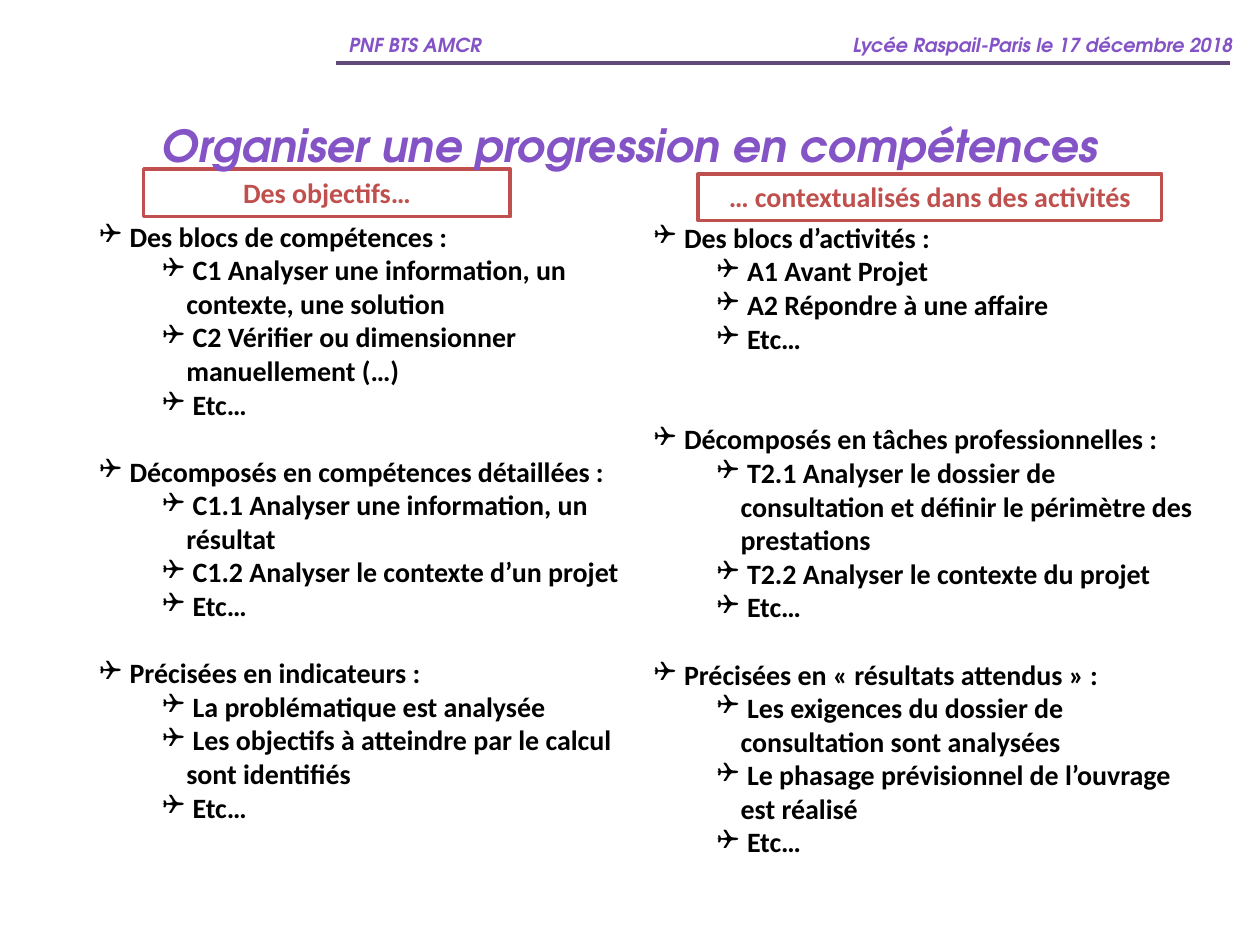
import lxml.etree
import pptx
import pptx.dml.color
import pptx.enum.shapes
import pptx.enum.text
import pptx.oxml.ns
import pptx.util

Inches = pptx.util.Inches
Pt = pptx.util.Pt
RGBColor = pptx.dml.color.RGBColor
Anchor = pptx.enum.text.MSO_ANCHOR
Align = pptx.enum.text.PP_ALIGN
qn = pptx.oxml.ns.qn

PURPLE = RGBColor(0x84, 0x53, 0xC6)
DARK_PURPLE = RGBColor(0x60, 0x4A, 0x7B)
RED = RGBColor(0xC0, 0x50, 0x4D)
BLACK = RGBColor(0, 0, 0)
WHITE = RGBColor(0xFF, 0xFF, 0xFF)
TITLE_FONT = "TeX Gyre Adventor"
BODY_FONT = "Calibri"
LINE_HEIGHT = 19.2

COLUMNS = [
    ("Des objectifs…", (1.14, 1.34, 2.91, 0.38), (0.69, 1.69, 4.49, 5.35), [
        (0, "Des blocs de compétences :", [
            "C1 Analyser une information, un contexte, une solution",
            "C2 Vérifier ou dimensionner manuellement (…)",
            "Etc…"]),
        (1, "Décomposés en compétences détaillées :", [
            "C1.1 Analyser une information, un résultat",
            "C1.2 Analyser le contexte d’un projet",
            "Etc…"]),
        (1, "Précisées en indicateurs :", [
            "La problématique est analysée",
            "Les objectifs à atteindre par le calcul sont identifiés",
            "Etc…"]),
    ]),
    ("… contextualisés dans des activités", (5.54, 1.38, 3.68, 0.37), (5.09, 1.7, 4.49, 5.62), [
        (0, "Des blocs d’activités :", [
            "A1 Avant Projet",
            "A2 Répondre à une affaire",
            "Etc…"]),
        (2, "Décomposés en tâches professionnelles :", [
            "T2.1 Analyser le dossier de consultation et définir le périmètre des prestations",
            "T2.2 Analyser le contexte du projet",
            "Etc…"]),
        (1, "Précisées en « résultats attendus » :", [
            "Les exigences du dossier de consultation sont analysées",
            "Le phasage prévisionnel de l’ouvrage est réalisé",
            "Etc…"]),
    ]),
]


def set_font(paragraph, name, size, color, italic=False):
    font = paragraph.font
    font.name = name
    font.size = Pt(size)
    font.bold = True
    font.italic = italic
    font.color.rgb = color


def set_bullet(paragraph, level):
    paragraph.level = level
    properties = paragraph._p.get_or_add_pPr()
    properties.set("marL", str(Inches(0.19 + 0.5 * level)))
    properties.set("indent", str(-Inches(0.19)))
    lxml.etree.SubElement(properties, qn("a:buFont"), typeface="Wingdings")
    lxml.etree.SubElement(properties, qn("a:buChar"), char="❑")


presentation = pptx.Presentation()
presentation.slide_width = Inches(10)
presentation.slide_height = Inches(7.5)
slide = presentation.slides.add_slide(presentation.slide_layouts[6])
shapes = slide.shapes

header = shapes.add_textbox(Inches(2.67), Inches(0.21), Inches(7.33), Inches(0.29))
header.text_frame.word_wrap = True
header.text_frame.vertical_anchor = Anchor.MIDDLE
paragraph = header.text_frame.paragraphs[0]
paragraph.text = "PNF BTS AMCR\tLycée Raspail-Paris le 17 décembre 2018"
tabs = lxml.etree.SubElement(paragraph._p.get_or_add_pPr(), qn("a:tabLst"))
lxml.etree.SubElement(tabs, qn("a:tab"), pos=str(Inches(4)), algn="l")
set_font(paragraph, TITLE_FONT, 11, PURPLE, italic=True)

header_rule = shapes.add_connector(
    pptx.enum.shapes.MSO_CONNECTOR.STRAIGHT,
    Inches(2.67), Inches(0.5), Inches(9.76), Inches(0.5))
header_rule.line.color.rgb = DARK_PURPLE
header_rule.line.width = Pt(2)
lxml.etree.SubElement(header_rule._element.spPr, qn("a:effectLst"))

for heading, heading_box, list_box, blocks in COLUMNS:
    label = shapes.add_shape(
        pptx.enum.shapes.MSO_SHAPE.RECTANGLE, *map(Inches, heading_box))
    label.shadow.inherit = False
    label.fill.solid()
    label.fill.fore_color.rgb = WHITE
    label.line.color.rgb = RED
    label.line.width = Pt(2)
    label.text_frame.word_wrap = True
    label.text_frame.vertical_anchor = Anchor.TOP
    paragraph = label.text_frame.paragraphs[0]
    paragraph.text = heading
    paragraph.alignment = Align.CENTER
    set_font(paragraph, BODY_FONT, 16, RED)

    frame = shapes.add_textbox(*map(Inches, list_box)).text_frame
    frame.word_wrap = True
    for gap_lines, block_title, items in blocks:
        for index, text in enumerate([block_title] + items):
            first = index == 0
            paragraph = frame.add_paragraph() if frame.text else frame.paragraphs[0]
            paragraph.text = " " + text
            if first and gap_lines:
                paragraph.space_before = Pt(gap_lines * LINE_HEIGHT)
            set_bullet(paragraph, 0 if first else 1)
            set_font(paragraph, BODY_FONT, 16, BLACK)

title = shapes.add_textbox(Inches(0.5), Inches(0.92), Inches(9), Inches(0.83))
title.text_frame.word_wrap = True
title.text_frame.margin_top = Inches(0.02)
paragraph = title.text_frame.paragraphs[0]
paragraph.text = "Organiser une progression en compétences"
paragraph.alignment = Align.CENTER
set_font(paragraph, TITLE_FONT, 25.2, PURPLE, italic=True)

presentation.save("out.pptx")
